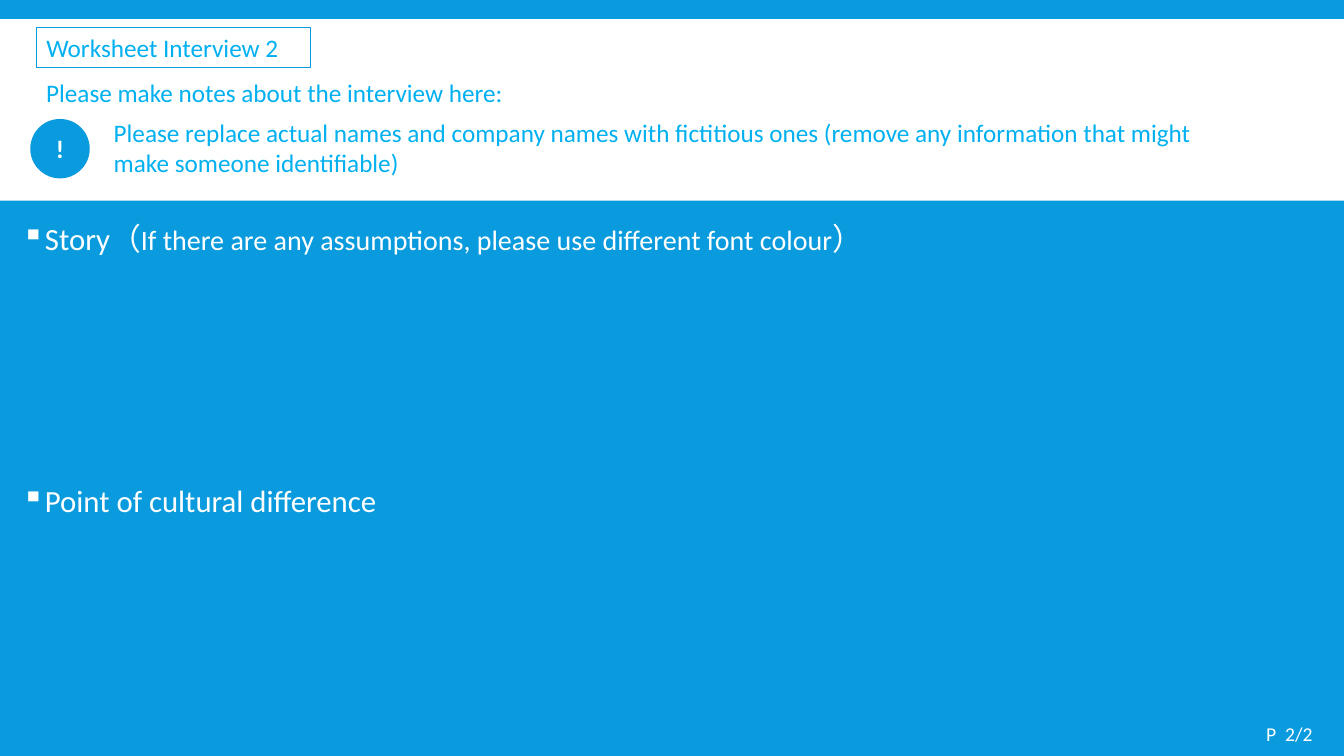
import pptx
import pptx.util
import pptx.dml.color
import pptx.enum.shapes
import pptx.enum.text
import pptx.oxml.ns
from lxml import etree

W, H = 13.33, 7.5
BLUE, SKY, WHITE = "099BDD", "00B0F0", "FFFFFF"
SHAPE = pptx.enum.shapes.MSO_SHAPE
ANCHOR = pptx.enum.text.MSO_ANCHOR
ALIGN = pptx.enum.text.PP_ALIGN


def rgb(value):
    return pptx.dml.color.RGBColor.from_string(value)


def box(left, top, width, height):
    """Turn shares of the slide's size into lengths."""
    return [pptx.util.Inches(round(v * size, 2))
            for v, size in zip((left, top, width, height), (W, H, W, H))]


def set_attributes(obj, values):
    for name, value in values.items():
        setattr(obj, name, value)


def write(sp, runs, color, align=ALIGN.LEFT, anchor=ANCHOR.TOP, bold=False, inset=0.05):
    """Fill a shape with one paragraph of (text, size) runs."""
    tf = sp.text_frame
    set_attributes(tf, {
        "word_wrap": True, "auto_size": pptx.enum.text.MSO_AUTO_SIZE.NONE,
        "vertical_anchor": anchor,
        "margin_left": pptx.util.Inches(0.1), "margin_right": pptx.util.Inches(0.1),
        "margin_top": pptx.util.Inches(inset), "margin_bottom": pptx.util.Inches(inset)})
    p = tf.paragraphs[0]
    p.alignment = align
    for text, size in runs:
        r = p.add_run()
        r.text = text
        set_attributes(r.font, {"name": "Calibri", "size": pptx.util.Pt(size), "bold": bold})
        r.font.color.rgb = rgb(color)
    return p


def add_text(s, place, runs, color, **options):
    return write(s.shapes.add_textbox(*box(*place)), runs, color, **options)


def add_heading(s, place, runs):
    """Add a white line of text with a square bullet."""
    p = add_text(s, place, runs, WHITE)
    p.line_spacing = 0.9
    indent = pptx.util.Inches(0.2)
    pPr = p._p.get_or_add_pPr()
    pPr.set("marL", str(indent))
    pPr.set("indent", str(-indent))
    qn = pptx.oxml.ns.qn
    bullet_color = etree.SubElement(pPr, qn("a:buClr"))
    etree.SubElement(bullet_color, qn("a:srgbClr"), val=WHITE)
    etree.SubElement(pPr, qn("a:buChar"), char="▪")


def add_filled(s, kind, place, color):
    sp = s.shapes.add_shape(kind, *box(*place))
    sp.shadow.inherit = False
    sp.fill.solid()
    sp.fill.fore_color.rgb = rgb(color)
    sp.line.fill.background()
    return sp


def format_title(title, place, text):
    set_attributes(title, dict(zip(("left", "top", "width", "height"), box(*place))))
    title.line.color.rgb = rgb(BLUE)
    title.line.width = pptx.util.Pt(0.75)
    write(title, [(text, 18)], SKY)


def main():
    prs = pptx.Presentation()
    prs.slide_width, prs.slide_height = pptx.util.Inches(W), pptx.util.Inches(H)
    s = prs.slides.add_slide(prs.slide_layouts[5])
    s.background.fill.solid()
    s.background.fill.fore_color.rgb = rgb(BLUE)

    title = s.shapes.title
    band = add_filled(s, SHAPE.RECTANGLE, (0, 0.0253, 1, 0.24), WHITE)
    title._element.addprevious(band._element)
    format_title(title, (0.027, 0.036, 0.204, 0.0533), "Worksheet Interview 2")

    add_text(s, (0.027, 0.096, 0.365, 0.0533),
             [("Please make notes about the interview here:", 18)], SKY)
    add_text(s, (0.0773, 0.148, 0.8357, 0.0947),
             [("Please replace actual names and company names with fictitious ones "
               "(remove any information that might make someone identifiable)", 18)], SKY)
    badge = add_filled(s, SHAPE.OVAL, (0.0225, 0.1573, 0.0443, 0.0787), BLUE)
    write(badge, [("!", 18)], WHITE, align=ALIGN.CENTER, anchor=ANCHOR.MIDDLE, bold=True)

    add_heading(s, (0.009, 0.2893, 0.8027, 0.2667),
                [("Story（", 22),
                 ("If there are any assumptions, please use different font colour", 20),
                 ("）", 22)])
    add_heading(s, (0.009, 0.636, 0.8807, 0.2667), [("Point of cultural difference", 22)])
    add_text(s, (0.9347, 0.9413, 0.0653, 0.0587), [("P  2/2", 14)], WHITE, inset=0.1)
    prs.save("out.pptx")


if __name__ == "__main__":
    main()
